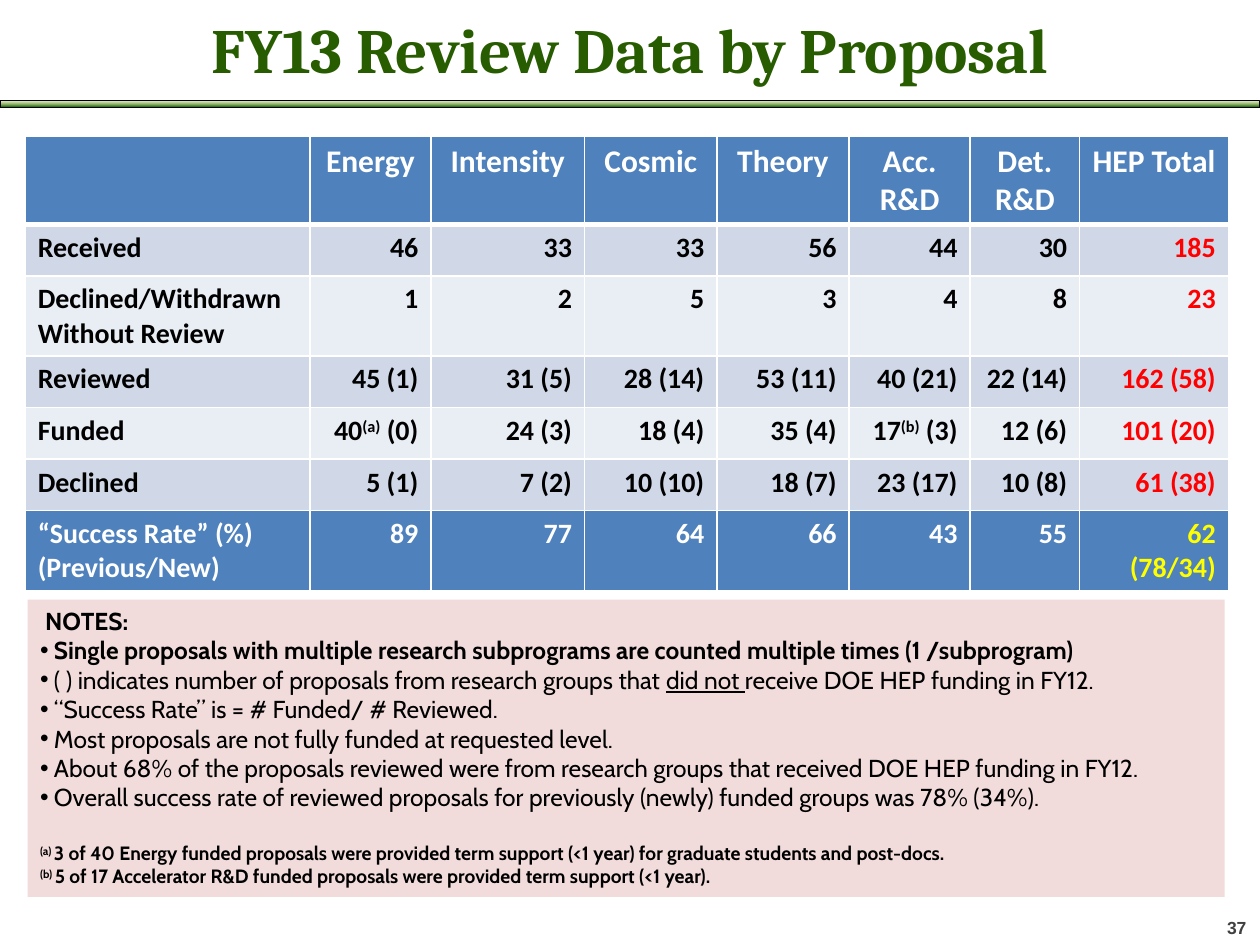
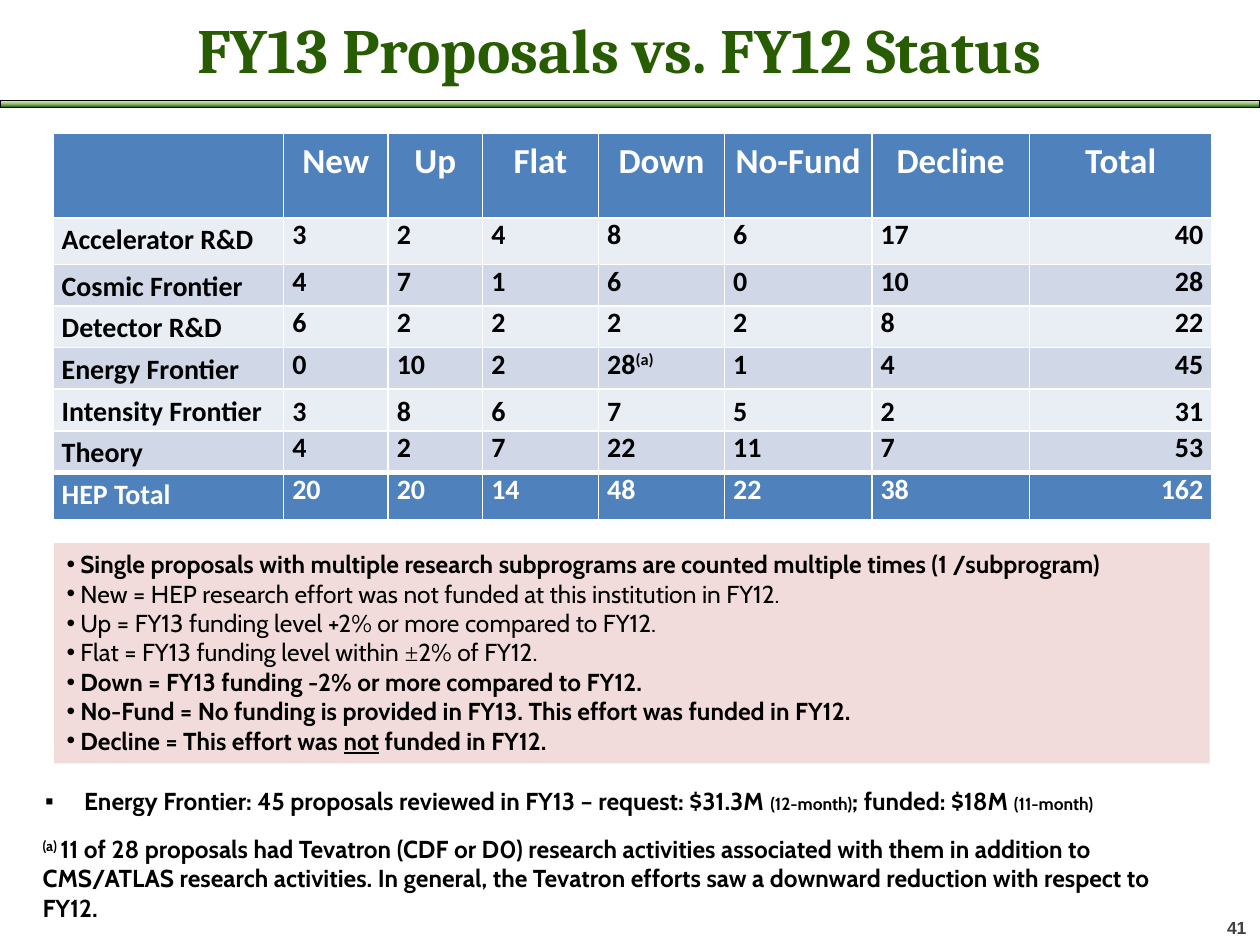
import copy
from dataclasses import dataclass, field

import lxml.etree
import pptx
import pptx.dml.color
import pptx.enum.shapes
import pptx.enum.text
import pptx.oxml.ns
import pptx.util

EMU_PER_PX = 9144  # 100 px to the inch
PAGE_WIDTH, PAGE_HEIGHT = 1000, 750

GREEN, GREY, BLACK, WHITE = "285C00", "404040", "000000", "FFFFFF"
RED, YELLOW = "FF0000", "FFFF00"
BLUE, BAND_DARK, BAND_LIGHT, PINK = "4F81BD", "D0D8E8", "E9EDF4", "F2DCDB"
RULE_STOPS = ((0, "DDEBCF"), (0.5, "9CB86E"), (1, "156B13"))

LEFT = pptx.enum.text.PP_ALIGN.LEFT
CENTER = pptx.enum.text.PP_ALIGN.CENTER
RIGHT = pptx.enum.text.PP_ALIGN.RIGHT
TOP = pptx.enum.text.MSO_ANCHOR.TOP
MIDDLE = pptx.enum.text.MSO_ANCHOR.MIDDLE
FIT_SHAPE = pptx.enum.text.MSO_AUTO_SIZE.SHAPE_TO_FIT_TEXT
RECTANGLE = pptx.enum.shapes.MSO_SHAPE.RECTANGLE


@dataclass
class Area:
    left: int
    top: int
    width: int
    height: int

    def emu(self) -> tuple:
        return tuple(px(side) for side in (self.left, self.top, self.width, self.height))


@dataclass
class Span:
    text: str
    bold: bool = False
    size: int = 14
    font: str = "Cabin"
    colour: str = BLACK
    underline: bool = False
    raised: bool = False


@dataclass
class Para:
    spans: list[Span]
    bullet: str = ""
    indent: int = 0
    align: int = LEFT
    line_spacing: float | None = None
    space_before: int = 0


@dataclass
class Grid:
    """A table whose first and last rows are blue and whose body rows are banded."""
    area: Area
    columns: list[int]
    heights: list[int]
    rows: list[list[str]]
    bands: tuple[str, str]
    heavy_line: int  # number of rows above the thick line
    header_size: int
    number_align: int
    margins: tuple[int, int]
    total_colour: str = BLACK
    grand_total_colour: str = WHITE
    label_spacing: float | None = None
    loose_rows: tuple[int, ...] = field(default=())


def px(length: int) -> int:
    return pptx.util.Emu(length * EMU_PER_PX)


def rgb(colour: str) -> pptx.dml.color.RGBColor:
    return pptx.dml.color.RGBColor.from_string(colour)


def add_xml(parent, tag: str, **attributes: str):
    return lxml.etree.SubElement(parent, pptx.oxml.ns.qn(tag), attributes)


def write_paras(frame, paras: list[Para]) -> None:
    for index, para in enumerate(paras):
        paragraph = frame.add_paragraph() if index else frame.paragraphs[0]
        paragraph.alignment = para.align
        if para.line_spacing:
            paragraph.line_spacing = para.line_spacing
        if para.space_before:
            paragraph.space_before = pptx.util.Pt(para.space_before)
        properties = paragraph._p.get_or_add_pPr()
        if para.indent:
            properties.set("marL", str(px(para.indent)))
        if para.bullet:
            properties.set("indent", str(px(-para.indent)))
            add_xml(properties, "a:buFont", typeface="Arial")
            add_xml(properties, "a:buChar", char=para.bullet)
        for span in para.spans:
            run = paragraph.add_run()
            run.text = span.text
            run.font.name = span.font
            run.font.size = pptx.util.Pt(span.size)
            run.font.bold = span.bold
            run.font.color.rgb = rgb(span.colour)
            if span.underline:
                run.font.underline = True
            if span.raised:
                run.font._element.set("baseline", "30000")


def add_text(page, area: Area, paras: list[Para], wrap: bool = True, fill: str = "") -> None:
    if fill:
        box = page.shapes.add_shape(RECTANGLE, *area.emu())
        box.shadow.inherit = False
        box.fill.solid()
        box.fill.fore_color.rgb = rgb(fill)
        box.line.fill.background()
    else:
        box = page.shapes.add_textbox(*area.emu())
    frame = box.text_frame
    frame.word_wrap = wrap
    frame.vertical_anchor = TOP
    frame.auto_size = FIT_SHAPE
    write_paras(frame, paras)


def add_page(deck, title: str, title_area: Area, number: int):
    """Add a slide with its title, green rule and page number."""
    page = deck.slides.add_slide(deck.slide_layouts[5])
    heading = page.shapes.title
    heading.left, heading.top, heading.width, heading.height = title_area.emu()
    heading.text_frame.vertical_anchor = MIDDLE
    heading.text_frame.auto_size = pptx.enum.text.MSO_AUTO_SIZE.NONE
    write_paras(heading.text_frame,
                [Para([Span(title, True, 36, "Cambria", GREEN)], align=CENTER)])

    rule = page.shapes.add_shape(RECTANGLE, *Area(0, 80, PAGE_WIDTH, 5).emu())
    rule.shadow.inherit = False
    rule.fill.gradient()
    rule.fill.gradient_angle = 270
    stop_list = next(rule._element.iter(pptx.oxml.ns.qn("a:gsLst")))
    stop_list.append(copy.deepcopy(stop_list[0]))
    for stop, (position, colour) in zip(rule.fill.gradient_stops, RULE_STOPS):
        stop.position = position
        stop.color.rgb = rgb(colour)
    rule.line.color.rgb = rgb(BLACK)
    rule.line.width = pptx.util.Pt(0.5)

    add_text(page, Area(964, 723, 36, 27),
             [Para([Span(str(number), True, 10, "Arial", GREY)])], wrap=False)
    return page


def set_borders(cell, row: int, heavy_line: int) -> None:
    top = 3 if row == heavy_line else 1
    bottom = 3 if row + 1 == heavy_line else 1
    properties = cell._tc.get_or_add_tcPr()
    for index, (side, points) in enumerate((("L", 1), ("R", 1), ("T", top), ("B", bottom))):
        line = add_xml(properties, f"a:ln{side}", w=str(pptx.util.Pt(points)))
        add_xml(add_xml(line, "a:solidFill"), "a:srgbClr", val=WHITE)
        properties.insert(index, line)


def cell_paras(grid: Grid, row: int, column: int) -> list[Para]:
    """Split a cell into lines; text between ^ marks is raised."""
    header, footer = row == 0, row == len(grid.rows) - 1
    last_column = column == len(grid.columns) - 1
    if header:
        align, colour = CENTER, WHITE
    else:
        align = LEFT if column == 0 else RIGHT if last_column else grid.number_align
        if last_column:
            colour = grid.grand_total_colour if footer else grid.total_colour
        else:
            colour = WHITE if footer else BLACK
    size = grid.header_size if header else 16
    spacing = grid.label_spacing if column == 0 or row in grid.loose_rows else None
    return [
        Para([Span(piece, True, size, "Calibri", colour, raised=index % 2 == 1)
              for index, piece in enumerate(line.split("^")) if piece],
             align=align, line_spacing=spacing)
        for line in grid.rows[row][column].split("\n")
    ]


def add_grid(page, grid: Grid) -> None:
    table = page.shapes.add_table(len(grid.rows), len(grid.columns), *grid.area.emu()).table
    for column, width in enumerate(grid.columns):
        table.columns[column].width = px(width)
    side, edge = grid.margins
    for row, height in enumerate(grid.heights):
        table.rows[row].height = px(height)
        blue = row in (0, len(grid.rows) - 1)
        for column in range(len(grid.columns)):
            cell = table.cell(row, column)
            cell.margin_left = cell.margin_right = px(side)
            cell.margin_top = cell.margin_bottom = px(edge)
            cell.fill.solid()
            cell.fill.fore_color.rgb = rgb(BLUE if blue else grid.bands[(row - 1) % 2])
            set_borders(cell, row, grid.heavy_line)
            write_paras(cell.text_frame, cell_paras(grid, row, column))


def note(*spans: Span) -> Para:
    return Para(list(spans), bullet="•", indent=11)


def footnote(mark: str, text: str, size: int, space_before: int = 0) -> Para:
    return Para([Span(f"{mark} ", True, size, raised=True), Span(text, True, size)],
                space_before=space_before)


COUNTED_TWICE = note(Span("Single proposals with multiple research subprograms are counted "
                          "multiple times (1 /subprogram)", True))


def build_review_page(deck) -> None:
    page = add_page(deck, "FY13 Review Data by Proposal", Area(50, 6, 900, 65), 37)
    add_grid(page, Grid(
        Area(20, 108, 955, 359), [226, 96, 122, 105, 105, 96, 87, 118], [41] * 7,
        [["", "Energy", "Intensity", "Cosmic", "Theory", "Acc. R&D", "Det. R&D", "HEP Total"],
         ["Received", "46", "33", "33", "56", "44", "30", "185"],
         ["Declined/Withdrawn\nWithout Review", "1", "2", "5", "3", "4", "8", "23"],
         ["Reviewed", "45 (1)", "31 (5)", "28 (14)", "53 (11)", "40 (21)", "22 (14)", "162 (58)"],
         ["Funded", "40^(a)^ (0)", "24 (3)", "18 (4)", "35 (4)", "17^(b)^ (3)", "12 (6)",
          "101 (20)"],
         ["Declined", "5 (1)", "7 (2)", "10 (10)", "18 (7)", "23 (17)", "10 (8)", "61 (38)"],
         ["“Success Rate” (%)\n(Previous/New)", "89", "77", "64", "66", "43", "55",
          "62\n(78/34)"]],
        bands=(BAND_DARK, BAND_LIGHT), heavy_line=1, header_size=18, number_align=RIGHT,
        margins=(10, 5), total_colour=RED, grand_total_colour=YELLOW))
    add_text(page, Area(22, 476, 950, 236), [
        Para([Span("NOTES:", True)], indent=4),
        COUNTED_TWICE,
        note(Span("( ) indicates number of proposals from research groups that "),
             Span("did not ", underline=True), Span("receive DOE HEP funding in FY12.")),
        note(Span("“Success Rate” is = # Funded/ # Reviewed.")),
        note(Span("Most proposals are not fully funded at requested level.")),
        note(Span("About 68% of the proposals reviewed were from research groups that "
                  "received DOE HEP funding in FY12.")),
        note(Span("Overall success rate of reviewed proposals for previously (newly) "
                  "funded groups was 78% (34%).")),
        footnote("(a)", "3 of 40 Energy funded proposals were provided term support "
                 "(<1 year) for graduate students and post-docs.", 11, space_before=17),
        footnote("(b)", "5 of 17 Accelerator R&D funded proposals were provided term "
                 "support (<1 year).", 11),
    ], fill=PINK)


def build_status_page(deck) -> None:
    page = add_page(deck, "FY13 Proposals vs. FY12 Status", Area(33, 4, 917, 69), 41)
    add_grid(page, Grid(
        Area(42, 106, 920, 308), [183, 83, 75, 92, 100, 117, 125, 145],
        [67, 37, 33, 33, 33, 33, 33, 38],
        [["", "New", "Up", "Flat", "Down", "No-Fund", "Decline", "Total"],
         ["Accelerator R&D", "3", "2", "4", "8", "6", "17", "40"],
         ["Cosmic Frontier", "4", "7", "1", "6", "0", "10", "28"],
         ["Detector R&D", "6", "2", "2", "2", "2", "8", "22"],
         ["Energy Frontier", "0", "10", "2", "28^(a)^", "1", "4", "45"],
         ["Intensity Frontier", "3", "8", "6", "7", "5", "2", "31"],
         ["Theory", "4", "2", "7", "22", "11", "7", "53"],
         ["HEP Total", "20", "20", "14", "48", "22", "38", "162"]],
        bands=(BAND_LIGHT, BAND_DARK), heavy_line=7, header_size=20, number_align=LEFT,
        margins=(7, 0), label_spacing=1.15, loose_rows=(0, 5)))
    add_text(page, Area(43, 431, 917, 175), [
        COUNTED_TWICE,
        note(Span("New = HEP research effort was not funded at this institution in FY12.")),
        note(Span("Up = FY13 funding level +2% or more compared to FY12.")),
        note(Span("Flat = FY13 funding level within "), Span("±", font="Times New Roman"),
             Span("2% of FY12.")),
        note(Span("Down = FY13 funding -2% or more compared to FY12.", True)),
        note(Span("No-Fund = No funding is provided in FY13. This effort was funded in FY12.",
                  True)),
        note(Span("Decline = This effort was ", True), Span("not", True, underline=True),
             Span(" funded in FY12.", True)),
    ], fill=PINK)
    add_text(page, Area(26, 619, 965, 34), [Para([
        Span("Energy Frontier: 45 proposals reviewed in FY13 – request: $31.3M ", True),
        Span("(12-month)", True, 10),
        Span("; funded: $18M ", True),
        Span("(11-month)", True, 10),
    ], bullet="▪", indent=31)])
    add_text(page, Area(24, 657, 917, 81), [footnote(
        "(a)", "11 of 28 proposals had Tevatron (CDF or D0) research activities associated "
        "with them in addition to CMS/ATLAS research activities. In general, the Tevatron "
        "efforts saw a downward reduction with respect to FY12.", 14)])


def main() -> None:
    deck = pptx.Presentation()
    deck.slide_width, deck.slide_height = px(PAGE_WIDTH), px(PAGE_HEIGHT)
    build_review_page(deck)
    build_status_page(deck)
    deck.save("out.pptx")


if __name__ == "__main__":
    main()
